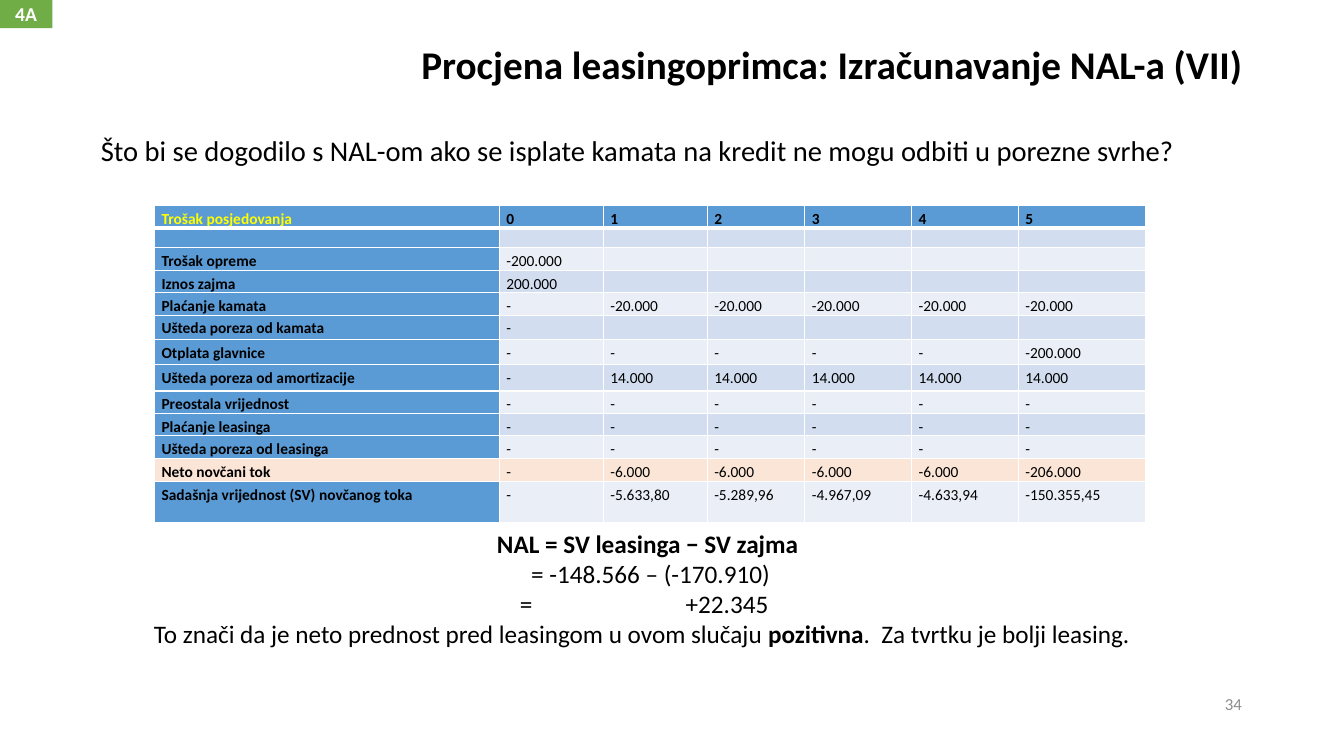
from dataclasses import dataclass

from lxml.etree import SubElement as Sub
from pptx import Presentation
from pptx.dml.color import RGBColor as RGB
from pptx.enum.shapes import MSO_SHAPE as Shape
from pptx.enum.text import MSO_ANCHOR as Anchor, PP_ALIGN as Align
from pptx.oxml.ns import qn
from pptx.util import Cm, Pt


@dataclass(frozen=True)
class Theme:
    font: str = "Calibri"
    black: str = "000000"
    white: str = "FFFFFF"
    grey: str = "8C8C8C"
    green: str = "70AD47"
    blue: str = "5B9BD5"
    yellow: str = "FFFF00"
    peach: str = "FBE5D6"
    bands: tuple = ("EAEFF7", "D2DEEF")
    title: float = 28
    lead: float = 20.4
    body: float = 18
    tag: float = 14
    page: float = 12
    cell: float = 11


def apply(item, form):
    for name, value in form.items():
        setattr(item, name, value)


class Deck:
    def __init__(self, theme):
        self.theme = theme
        self.show = Presentation()
        apply(self.show, {"slide_width": Cm(33.87), "slide_height": Cm(19.05)})
        self.slide = self.show.slides.add_slide(self.show.slide_layouts[6])

    def run(self, para, text, size, color=None, bold=False, **form):
        """Add one run to a paragraph and set the paragraph's format."""
        apply(para, form)
        run = para.add_run()
        run.text = text
        apply(run.font, {"name": self.theme.font, "size": Pt(size), "bold": bold})
        run.font.color.rgb = RGB.from_string(color or self.theme.black)

    def text(self, box, anchor=Anchor.TOP):
        """Add an empty wrapping text box and return its frame."""
        frame = self.slide.shapes.add_textbox(*map(Cm, box)).text_frame
        apply(frame, {"word_wrap": True, "vertical_anchor": anchor})
        return frame

    def line(self, box, text, size, anchor=Anchor.TOP, **form):
        """Add a text box of one paragraph and return the paragraph."""
        para = self.text(box, anchor).paragraphs[0]
        self.run(para, text, size, **form)
        return para

    def tag(self, box, text):
        shape = self.slide.shapes.add_shape(Shape.RECTANGLE, *map(Cm, box))
        shape.shadow.inherit = False
        shape.fill.solid()
        shape.fill.fore_color.rgb = RGB.from_string(self.theme.green)
        shape.line.fill.background()
        frame = shape.text_frame
        edges = ("margin_left", "margin_right", "margin_top", "margin_bottom")
        apply(frame, dict.fromkeys(edges, 0) | {"vertical_anchor": Anchor.MIDDLE})
        self.run(frame.paragraphs[0], text, self.theme.tag, self.theme.white,
                 True, alignment=Align.CENTER)

    def border(self, cell, widths):
        """Draw white cell edges; widths are points for left, right, top, bottom."""
        props = cell._tc.get_or_add_tcPr()
        for spot, (side, width) in enumerate(zip("LRTB", widths)):
            edge = Sub(props, qn(f"a:ln{side}"), w=str(Pt(width)))
            Sub(Sub(edge, qn("a:solidFill")), qn("a:srgbClr"), val=self.theme.white)
            props.insert(spot, edge)

    def cell(self, cell, text, fill, color, bold, widths):
        cell.fill.solid()
        cell.fill.fore_color.rgb = RGB.from_string(fill)
        apply(cell, {"margin_left": Cm(0.18), "margin_right": Cm(0.18),
                     "margin_top": Cm(0.03), "margin_bottom": 0})
        para = cell.text_frame.paragraphs[0]
        size = self.theme.cell
        if text:
            self.run(para, text, size, color, bold,
                     line_spacing=1.15, space_after=Pt(10))
        else:
            para._p.get_or_add_endParaRPr().set("sz", str(size * 100))
        self.border(cell, widths)

    def table(self, box, rows, cols, highs, peak):
        """Add the cost table; peak is the index of the highlighted row."""
        theme = self.theme
        grid = self.slide.shapes.add_table(len(rows), len(cols), *map(Cm, box)).table
        for col, wide in zip(grid.columns, cols):
            col.width = Cm(wide)
        for row, high in zip(grid.rows, highs):
            row.height = Cm(high)
        for r, row in enumerate(rows):
            for c, text in enumerate(row):
                head = r == 0 or c == 0
                fill = theme.blue if head else theme.bands[r % 2]
                self.cell(grid.cell(r, c), text,
                          theme.peach if r == peak else fill,
                          theme.yellow if r == c == 0 else theme.black, head,
                          (1, 1, 3 if r == 1 else 1, 3 if r == 0 else 1))

    def stops(self, para, *places):
        """Set left tab stops on a paragraph."""
        tabs = Sub(para._p.get_or_add_pPr(), qn("a:tabLst"))
        for place in places:
            Sub(tabs, qn("a:tab"), pos=str(Cm(place)), algn="l")


NONE = ["-"] * 6
ROWS = [
    ["Trošak posjedovanja", *"012345"],
    [""] * 7,
    ["Trošak opreme", "-200.000"] + [""] * 5,
    ["Iznos zajma", "200.000"] + [""] * 5,
    ["Plaćanje kamata", "-"] + ["-20.000"] * 5,
    ["Ušteda poreza od kamata", "-"] + [""] * 5,
    ["Otplata glavnice"] + NONE[:5] + ["-200.000"],
    ["Ušteda poreza od amortizacije", "-"] + ["14.000"] * 5,
    ["Preostala vrijednost"] + NONE,
    ["Plaćanje leasinga"] + NONE,
    ["Ušteda poreza od leasinga"] + NONE,
    ["Neto novčani tok", "-"] + ["-6.000"] * 4 + ["-206.000"],
    ["Sadašnja vrijednost (SV) novčanog toka", "-", "-5.633,80", "-5.289,96",
     "-4.967,09", "-4.633,94", "-150.355,45"],
]
COLS = [8.69, 2.62, 2.62, 2.46, 2.69, 2.69, 3.2]
HIGHS = [0.51, 0.48, 0.56, 0.48, 0.56, 0.61, 0.64, 0.66, 0.48, 0.53, 0.58, 0.58, 1.02]


def main():
    theme = Theme()
    deck = Deck(theme)
    lead = deck.line((1.02, 3.38, 29.21, 1.42),
                     "Što bi se dogodilo s NAL-om ako se isplate kamata na kredit "
                     "ne mogu odbiti u porezne svrhe?", theme.lead, line_spacing=0.8)
    lead._p.get_or_add_pPr().set("marL", str(Cm(1.27)))
    deck.line((2.34, 1.02, 29.21, 1.45),
              "Procjena leasingoprimca: Izračunavanje NAL-a (VII)", theme.title,
              bold=True, alignment=Align.RIGHT, line_spacing=0.9)

    frame = deck.text((3.63, 13.18, 25.53, 4.11))
    size = theme.body
    deck.run(frame.paragraphs[0], "NAL = SV leasinga − SV zajma ", size,
             bold=True, alignment=Align.CENTER)
    deck.run(frame.add_paragraph(), "= -148.566 – (-170.910)", size,
             alignment=Align.CENTER)
    gain = frame.add_paragraph()
    deck.stops(gain, 9.22, 13.4)
    deck.run(gain, "\t=\t+22.345", size)
    last = frame.add_paragraph()
    for text, bold in (
            ("To znači da je neto prednost pred leasingom u ovom slučaju ", False),
            ("pozitivna", True), (".  Za tvrtku je bolji leasing.", False)):
        deck.run(last, text, size, bold=bold)

    deck.tag((0, 0, 1.32, 0.71), "4A")
    deck.line((23.93, 17.22, 7.62, 1.02), "34", theme.page, Anchor.MIDDLE,
              color=theme.grey, alignment=Align.RIGHT)
    deck.table((3.89, 5.18, sum(COLS), sum(HIGHS)), ROWS, COLS, HIGHS, peak=11)
    deck.show.save("out.pptx")


if __name__ == "__main__":
    main()
